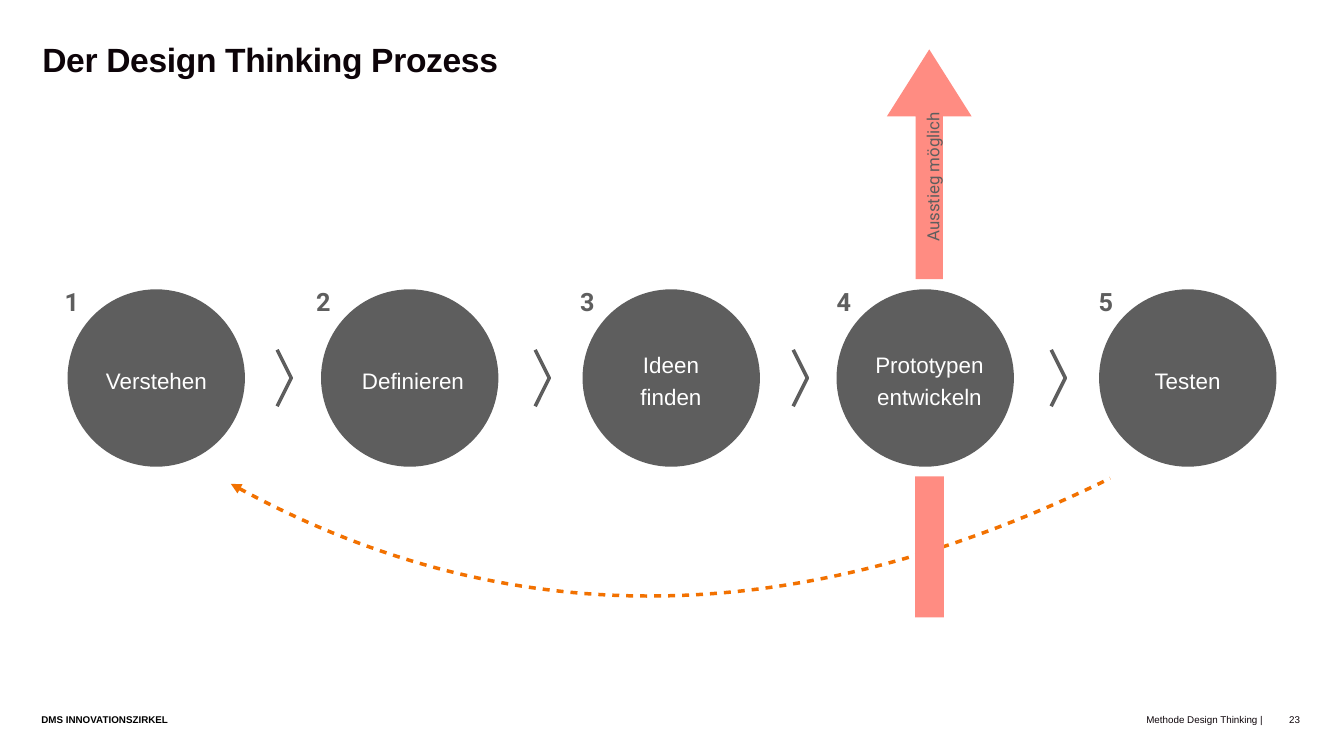
from lxml.etree import SubElement
from pptx import Presentation
from pptx.dml.color import RGBColor
from pptx.enum.shapes import MSO_SHAPE
from pptx.enum.text import MSO_ANCHOR, PP_ALIGN
from pptx.oxml.ns import qn
from pptx.util import Inches, Pt

COLORS = {
    "ink": "0D0409",
    "black": "000000",
    "gray": "5E5E5E",
    "white": "FFFFFF",
    "orange": "F27100",
    "coral": "FF8C82",
}
MIDDLE = 7.5
DIAMETER = 3.52
LABEL_WIDTH = 4.05
STEPS = [
    # circle left, label left, number left, label lines
    (1.34, 1.08, 0.8, ["Verstehen"]),
    (6.37, 6.17, 5.79, ["Definieren"]),
    (11.56, 11.29, 11.03, ["Ideen", "finden"]),
    (16.6, 16.42, 16.12, ["Prototypen", "entwickeln"]),
    (21.81, 21.54, 21.32, ["Testen"]),
]
STEPS = [step for step in STEPS]


class ProcessSlide:
    """Draws styled elements on one slide."""

    def __init__(self, slide):
        self.slide = slide

    def color(self, name):
        return RGBColor.from_string(COLORS[name])

    def text(self, box, lines, size, color, font="Arial", bold=False,
             align=PP_ALIGN.LEFT, spacing=None, wrap=True, rotation=0,
             anchor=MSO_ANCHOR.TOP, inset=0, tracking=None):
        shape = self.slide.shapes.add_textbox(*map(Inches, box))
        shape.rotation = rotation
        frame = shape.text_frame
        frame.word_wrap = wrap
        frame.vertical_anchor = anchor
        frame.margin_left = frame.margin_right = Inches(inset)
        frame.margin_top = frame.margin_bottom = Inches(inset)
        paragraph = frame.paragraphs[0]
        paragraph.alignment = align
        if spacing:
            paragraph.line_spacing = Pt(spacing)
        for index, line in enumerate(lines):
            if index:
                paragraph.add_line_break()
            run = paragraph.add_run()
            run.text = line
            run.font.name = font
            run.font.size = Pt(size)
            run.font.bold = bold
            run.font.color.rgb = self.color(color)
            if tracking:
                run.font._element.set("spc", str(int(tracking * 100)))

    def solid(self, kind, box, color, rotation=0, adjustments=()):
        shape = self.slide.shapes.add_shape(kind, *map(Inches, box))
        shape.shadow.inherit = False
        shape.rotation = rotation
        shape.fill.solid()
        shape.fill.fore_color.rgb = self.color(color)
        shape.line.fill.background()
        for index, value in enumerate(adjustments):
            shape.adjustments[index] = value

    def outline(self, points, color, width):
        start, *others = [tuple(map(Inches, point)) for point in points]
        builder = self.slide.shapes.build_freeform(*start)
        builder.add_line_segments(others, close=False)
        shape = builder.convert_to_shape()
        shape.shadow.inherit = False
        shape.fill.background()
        shape.line.color.rgb = self.color(color)
        shape.line.width = Pt(width)
        return shape

    def dashed_curve(self, start, controls, end, bottom, color, width):
        middle = ((start[0] + end[0]) / 2, bottom)
        shape = self.outline([start, middle, end], color, width)
        path = shape._element.spPr.find(".//" + qn("a:path"))
        for segment in path.findall(qn("a:lnTo")):
            path.remove(segment)
        curve = SubElement(path, qn("a:cubicBezTo"))
        for x, y in [*controls, end]:
            SubElement(curve, qn("a:pt"), x=str(Inches(x) - shape.left),
                       y=str(Inches(y) - shape.top))
        line = shape.line._get_or_add_ln()
        dashes = SubElement(line, qn("a:custDash"))
        SubElement(dashes, qn("a:ds"), d="200000", sp="200000")
        SubElement(line, qn("a:headEnd"), type="triangle")


def main():
    presentation = Presentation()
    presentation.slide_width = Inches(26.67)
    presentation.slide_height = Inches(15)
    page = ProcessSlide(presentation.slides.add_slide(presentation.slide_layouts[6]))

    page.text((25.57, 14.17, 0.23, 0.23), ["23"], 14, "ink",
              align=PP_ALIGN.RIGHT, spacing=16, wrap=False)
    page.text((12.91, 14.17, 12.15, 0.23), ["Methode Design Thinking |"], 14, "ink",
              align=PP_ALIGN.RIGHT, spacing=16)
    page.text((0.84, 0.83, 25.01, 1.5), ["Der Design Thinking Prozess"], 48, "ink",
              bold=True, spacing=54, tracking=-0.5)
    page.text((0.82, 14.17, 12.27, 0.23), ["DMS INNOVATIONSZIRKEL"], 14, "black",
              bold=True, spacing=16)

    for circle_left, label_left, _, lines in STEPS:
        page.solid(MSO_SHAPE.OVAL,
                   (circle_left, MIDDLE - DIAMETER / 2, DIAMETER, DIAMETER), "gray")
        height = 0.62 * len(lines)
        page.text((label_left, MIDDLE - height / 2, LABEL_WIDTH, height), lines, 32,
                  "white", align=PP_ALIGN.CENTER, spacing=45)

    for index in range(len(STEPS) - 1):
        left = 5.5 + 5.12 * index
        page.outline([(left, MIDDLE - 0.56), (left + 0.28, MIDDLE),
                      (left, MIDDLE + 0.56)], "gray", 5)

    page.dashed_curve((4.58, 9.6), [(9.97, 12.59), (15.79, 12.55)], (22.03, 9.49),
                      11.82, "orange", 5)

    for number, (_, _, number_left, _) in enumerate(STEPS, 1):
        page.text((number_left, 5.68, 0.77, 0.6), [str(number)], 36, "gray",
                  font="Roboto", bold=True, align=PP_ALIGN.RIGHT)

    page.solid(MSO_SHAPE.RIGHT_ARROW, (16.16, 2.42, 4.56, 1.68), "coral",
               rotation=270, adjustments=(0.32, 0.79))
    page.solid(MSO_SHAPE.RECTANGLE, (18.16, 9.45, 0.57, 2.8), "coral")
    page.text((15.34, 3.26, 6.34, 0.5), ["Ausstieg möglich"], 24, "gray",
              font="Roboto", align=PP_ALIGN.CENTER, rotation=270,
              anchor=MSO_ANCHOR.MIDDLE, inset=0.06)

    presentation.save("out.pptx")


if __name__ == "__main__":
    main()
